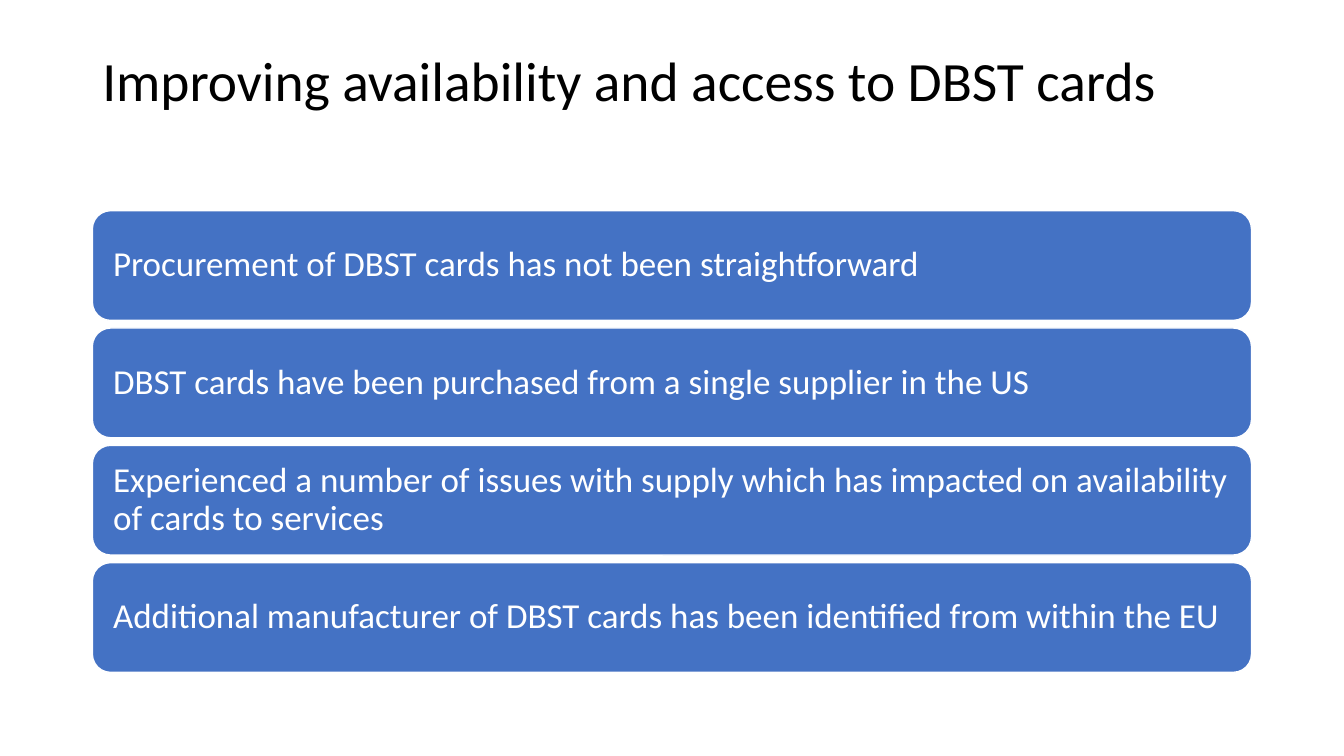
"""Build the slide on availability and access to DBST cards."""
from dataclasses import dataclass

from pptx import Presentation
from pptx.dml.color import RGBColor
from pptx.enum.shapes import MSO_SHAPE
from pptx.enum.text import MSO_ANCHOR, PP_ALIGN
from pptx.shapes.autoshape import Shape
from pptx.slide import Slide
from pptx.util import Pt

BLACK = RGBColor(0x00, 0x00, 0x00)
WHITE = RGBColor(0xFF, 0xFF, 0xFF)
BLUE = RGBColor(0x44, 0x72, 0xC4)
FONT = "Calibri"
LEFT, WIDTH = 66, 828
BAR_TOP, BAR_HEIGHT, BAR_PITCH = 150.5, 78.4, 83.8


@dataclass(frozen=True)
class Bar:
    text: str
    top: float


MESSAGES = (
    "Procurement of DBST cards has not been straightforward",
    "DBST cards have been purchased from a single supplier in the US",
    "Experienced a number of issues with supply which has impacted on "
    "availability of cards to services",
    "Additional manufacturer of DBST cards has been identified from within the EU",
)
BARS = [Bar(text, BAR_TOP + index * BAR_PITCH) for index, text in enumerate(MESSAGES)]


def write_text(shape: Shape, text: str, *, size: float, color: RGBColor,
               anchor: MSO_ANCHOR, side_margin: float, top_margin: float) -> None:
    frame = shape.text_frame
    frame.word_wrap = True
    frame.vertical_anchor = anchor
    frame.margin_left = frame.margin_right = Pt(side_margin)
    frame.margin_top = frame.margin_bottom = Pt(top_margin)
    paragraph = frame.paragraphs[0]
    paragraph.alignment = PP_ALIGN.LEFT
    paragraph.line_spacing = 0.9
    run = paragraph.add_run()
    run.text = text
    run.font.name = FONT
    run.font.size = Pt(size)
    run.font.color.rgb = color


def draw_title(slide: Slide, text: str) -> None:
    shape = slide.shapes.add_textbox(Pt(LEFT), Pt(28.75), Pt(WIDTH), Pt(104.4))
    write_text(shape, text, size=39.6, color=BLACK, anchor=MSO_ANCHOR.TOP,
               side_margin=7.2, top_margin=9.5)


def draw_bar(slide: Slide, bar: Bar) -> None:
    shape = slide.shapes.add_shape(MSO_SHAPE.ROUNDED_RECTANGLE, Pt(LEFT), Pt(bar.top),
                                   Pt(WIDTH), Pt(BAR_HEIGHT))
    shape.shadow.inherit = False
    shape.fill.solid()
    shape.fill.fore_color.rgb = BLUE
    shape.line.color.rgb = WHITE
    shape.line.width = Pt(1)
    write_text(shape, bar.text, size=25, color=WHITE, anchor=MSO_ANCHOR.MIDDLE,
               side_margin=11, top_margin=7.2)


def main() -> None:
    presentation = Presentation()
    presentation.slide_width = Pt(960)
    presentation.slide_height = Pt(540)
    slide = presentation.slides.add_slide(presentation.slide_layouts[6])
    draw_title(slide, "Improving availability and access to DBST cards")
    for bar in BARS:
        draw_bar(slide, bar)
    presentation.save("out.pptx")


if __name__ == "__main__":
    main()
